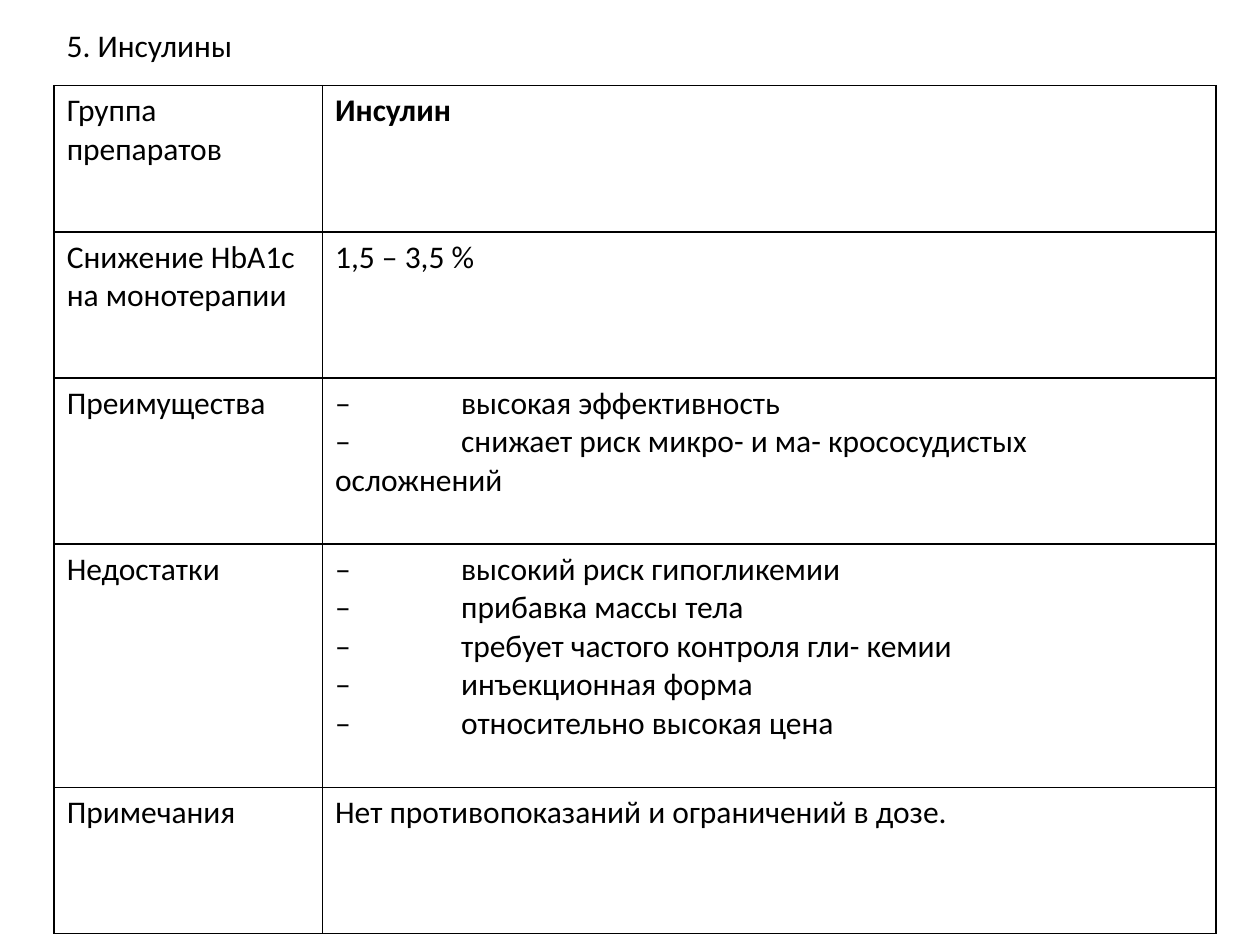
from dataclasses import dataclass

from lxml.etree import SubElement
from pptx import Presentation
from pptx.dml.color import RGBColor as Color
from pptx.oxml.ns import qn
from pptx.util import Inches, Pt

TITLE = "5. Инсулины"
DASH = "–\t"

# (row height in inches, label, lines of the second column, bold)
ROWS = [
    (1.16, "Группа препаратов", ["Инсулин"], True),
    (1.16, "Снижение HbA1c на монотерапии", ["1,5 – 3,5 %"], False),
    (1.32, "Преимущества", [
        DASH + "высокая эффективность",
        DASH + "снижает риск микро- и ма- крососудистых\vосложнений",
    ], False),
    (1.93, "Недостатки", [
        DASH + "высокий риск гипогликемии",
        DASH + "прибавка массы тела",
        DASH + "требует частого контроля гли- кемии",
        DASH + "инъекционная форма",
        DASH + "относительно высокая цена",
    ], False),
    (1.16, "Примечания", ["Нет противопоказаний и ограничений в дозе."], False),
]
COLUMNS = (2.13, 7.09)
LEFT, TITLE_TOP, TITLE_HEIGHT, TABLE_TOP = 0.43, 0.16, 0.4, 0.68
TAB_STOP = 1


@dataclass(frozen=True)
class Theme:
    font: str = "Calibri"
    size: int = 18
    ink: str = "000000"
    paper: str = "FFFFFF"
    border: int = 1


THEME = Theme()


def set_tab_stop(paragraph, position):
    stops = SubElement(paragraph._p.get_or_add_pPr(), qn("a:tabLst"))
    SubElement(stops, qn("a:tab"), pos=str(Inches(position)), algn="l")


def write(frame, lines, *, size=THEME.size, color=THEME.ink, bold=False):
    frame.word_wrap = True
    for index, line in enumerate(lines):
        paragraph = frame.paragraphs[0] if index == 0 else frame.add_paragraph()
        paragraph.text = line
        if line.startswith(DASH):
            set_tab_stop(paragraph, TAB_STOP)
        for run in paragraph.runs:
            run.font.name = THEME.font
            run.font.size = Pt(size)
            run.font.bold = bold
            run.font.color.rgb = Color.from_string(color)


def style_cell(cell):
    """Draw the four borders, then fill: the schema wants lines first."""
    properties = cell._tc.get_or_add_tcPr()
    for side in ("a:lnL", "a:lnR", "a:lnT", "a:lnB"):
        line = SubElement(properties, qn(side), w=str(Pt(THEME.border)))
        fill = SubElement(line, qn("a:solidFill"))
        SubElement(fill, qn("a:srgbClr"), val=THEME.ink)
    cell.fill.solid()
    cell.fill.fore_color.rgb = Color.from_string(THEME.paper)


def add_title(slide):
    box = slide.shapes.add_textbox(
        Inches(LEFT), Inches(TITLE_TOP), Inches(sum(COLUMNS)), Inches(TITLE_HEIGHT))
    write(box.text_frame, [TITLE])


def add_drug_table(slide):
    height = sum(row[0] for row in ROWS)
    table = slide.shapes.add_table(
        len(ROWS), len(COLUMNS), Inches(LEFT), Inches(TABLE_TOP),
        Inches(sum(COLUMNS)), Inches(height)).table
    table.first_row = table.horz_banding = False
    for column, width in zip(table.columns, COLUMNS):
        column.width = Inches(width)
    for row, (row_height, label, lines, bold) in zip(table.rows, ROWS):
        row.height = Inches(row_height)
        label_cell, value_cell = row.cells
        write(label_cell.text_frame, [label])
        write(value_cell.text_frame, lines, bold=bold)
        style_cell(label_cell)
        style_cell(value_cell)


def main():
    presentation = Presentation()
    presentation.slide_width, presentation.slide_height = Inches(10), Inches(7.5)
    slide = presentation.slides.add_slide(presentation.slide_layouts[6])
    add_drug_table(slide)
    add_title(slide)
    presentation.save("out.pptx")


if __name__ == "__main__":
    main()
